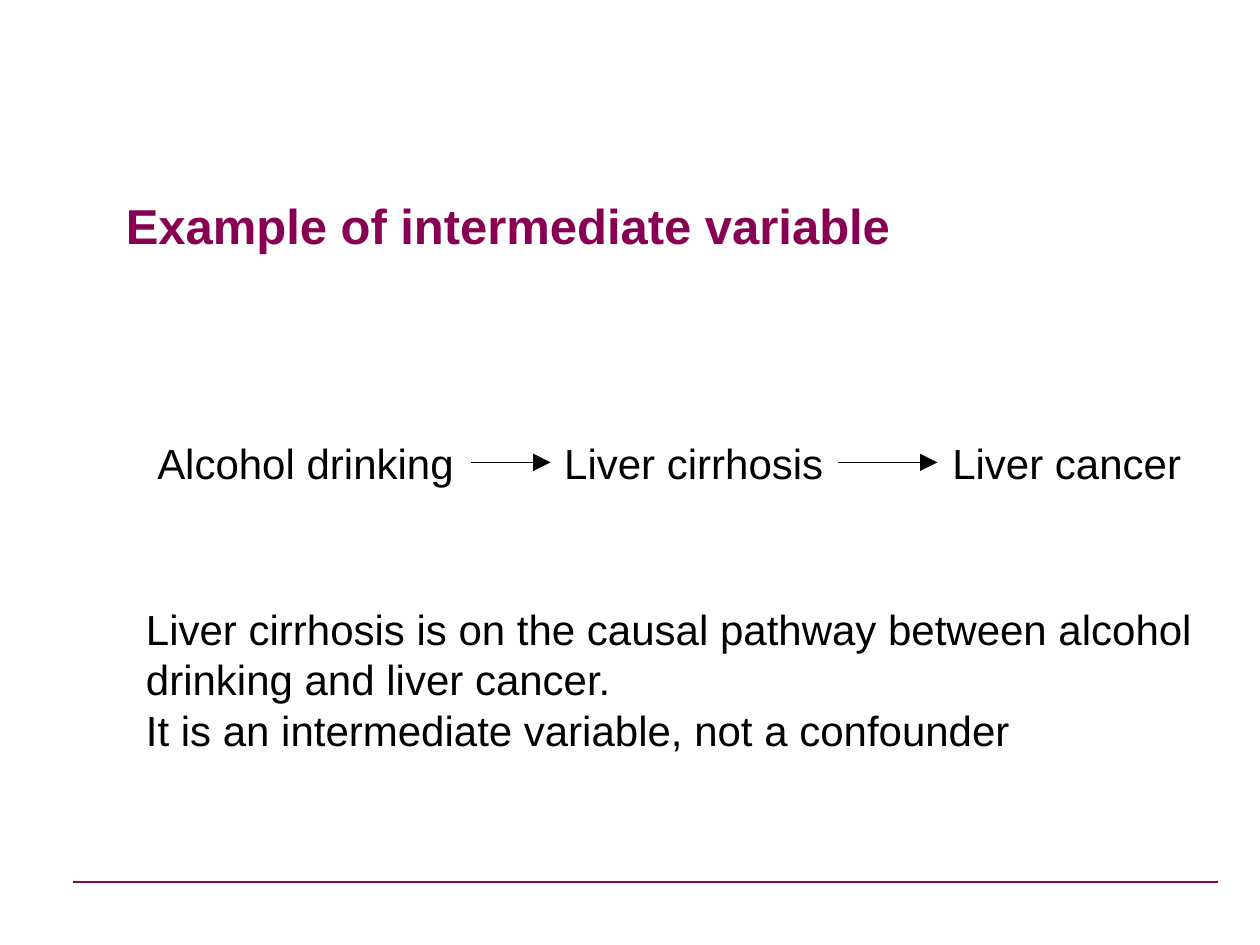
from dataclasses import dataclass

import pptx
import pptx.dml.color
import pptx.enum.shapes
import pptx.enum.text
import pptx.oxml
import pptx.oxml.ns
import pptx.util
from pptx.util import Inches

PLUM = "870052"
BLACK = "000000"
DRAWING = pptx.oxml.ns.nsdecls("a")
BODY = {"name": "Arial", "size": pptx.util.Pt(24), "bold": False}
HEADING = {"name": "Arial", "size": pptx.util.Pt(28), "bold": True}


@dataclass
class Label:
    lines: list[str]
    left: float
    top: float
    width: float
    height: float


@dataclass
class Rule:
    left: float
    right: float
    top: float
    color: str
    weight: float
    arrow: bool = False


def hex_color(value: str) -> pptx.dml.color.RGBColor:
    return pptx.dml.color.RGBColor.from_string(value)


def draw_label(page, label: Label, style: dict, color: str = BLACK, title: bool = False) -> None:
    box = page.shapes.add_textbox(
        Inches(label.left), Inches(label.top), Inches(label.width), Inches(label.height)
    )
    frame = box.text_frame
    frame.word_wrap = title
    if title:
        frame.vertical_anchor = pptx.enum.text.MSO_ANCHOR.MIDDLE
    else:
        frame.auto_size = pptx.enum.text.MSO_AUTO_SIZE.SHAPE_TO_FIT_TEXT
    frame.text = "\n".join(label.lines)
    for para in frame.paragraphs:
        for span in para.runs:
            for attribute, value in style.items():
                setattr(span.font, attribute, value)
            span.font.color.rgb = hex_color(color)


def draw_rule(page, rule: Rule) -> None:
    connector = page.shapes.add_connector(
        pptx.enum.shapes.MSO_CONNECTOR.STRAIGHT,
        Inches(rule.left), Inches(rule.top), Inches(rule.right), Inches(rule.top),
    )
    connector.line.color.rgb = hex_color(rule.color)
    connector.line.width = pptx.util.Pt(rule.weight)
    if rule.arrow:
        connector.line._get_or_add_ln().append(
            pptx.oxml.parse_xml(f'<a:tailEnd {DRAWING} type="triangle" w="lg" len="lg"/>')
        )
    connector._element.spPr.append(pptx.oxml.parse_xml(f"<a:effectLst {DRAWING}/>"))


def main() -> None:
    deck = pptx.Presentation()
    deck.slide_width, deck.slide_height = Inches(10), Inches(7.5)
    page = deck.slides.add_slide(deck.slide_layouts[6])

    draw_rule(page, Rule(0.58, 9.67, 7, PLUM, 0.75))
    title = Label(["Example of intermediate variable"], 0.9, 1.16, 8.75, 1.25)
    draw_label(page, title, HEADING, PLUM, title=True)

    pathway = [
        ("Alcohol drinking", 1.15, 2.57),
        ("Liver cirrhosis", 4.38, 2.27),
        ("Liver cancer", 7.46, 2.03),
    ]
    for name, left, width in pathway:
        draw_label(page, Label([name], left, 3.42, width, 0.51), BODY)
    for start, end in [(3.74, 4.37), (6.65, 7.44)]:
        draw_rule(page, Rule(start, end, 3.67, BLACK, 1, arrow=True))

    explanation = [
        "Liver cirrhosis is on the causal pathway between alcohol",
        "drinking and liver cancer.",
        "It is an intermediate variable, not a confounder",
    ]
    draw_label(page, Label(explanation, 1.06, 4.74, 8.51, 1.3), BODY)
    deck.save("out.pptx")


if __name__ == "__main__":
    main()
